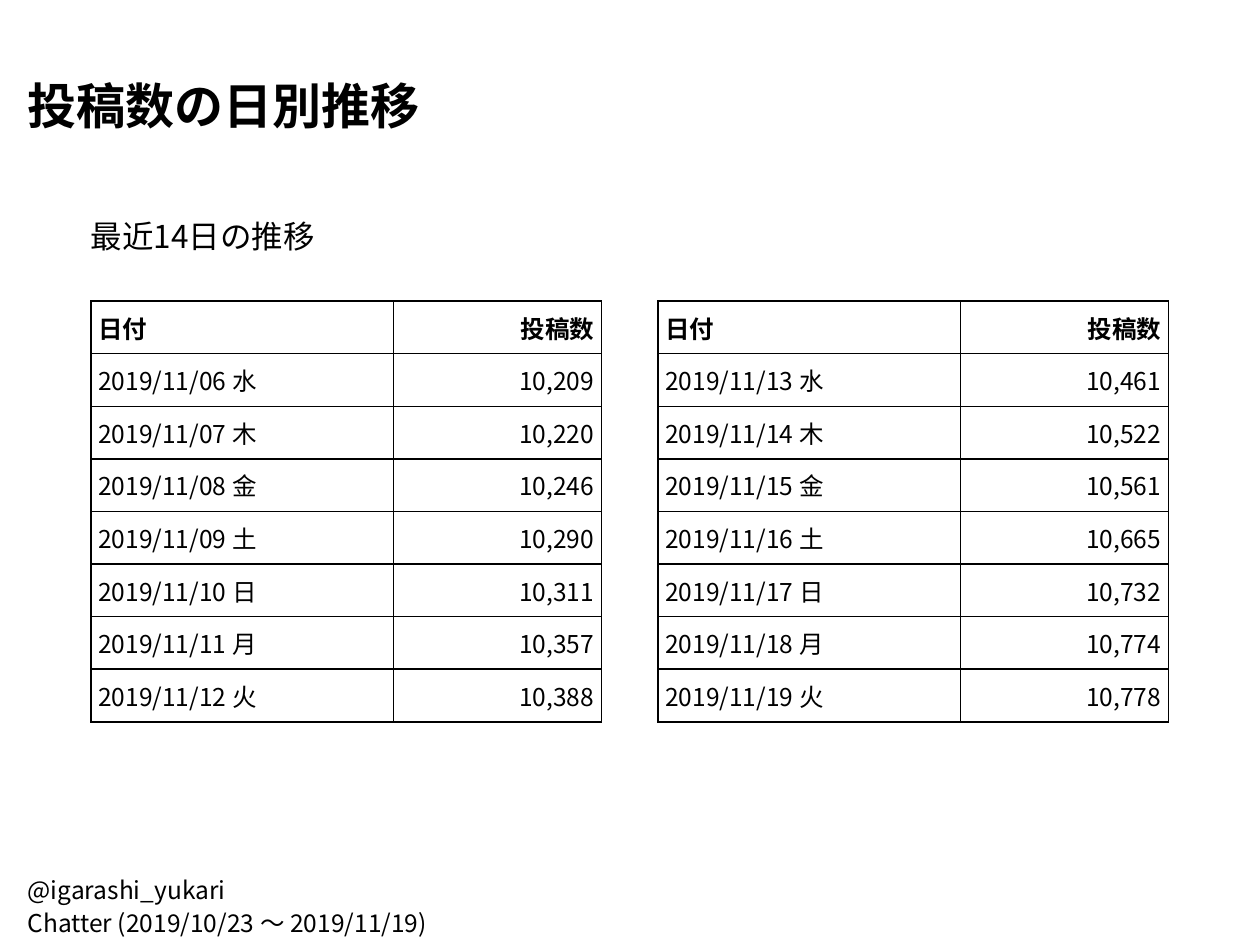
from dataclasses import dataclass

from lxml.etree import SubElement
from pptx import Presentation
from pptx.dml.color import RGBColor
from pptx.enum.text import MSO_ANCHOR, MSO_AUTO_SIZE, PP_ALIGN
from pptx.oxml.ns import qn
from pptx.util import Cm, Length, Pt

BLACK = RGBColor(0x00, 0x00, 0x00)
WHITE = RGBColor(0xFF, 0xFF, 0xFF)
FONT = "Noto Sans CJK JP"
WEEKDAYS = "水木金土日月火"
HEADER = ("日付", "投稿数")
COLUMN_WIDTHS = (Cm(6.1), Cm(4.2))
ROW_HEIGHT = Cm(1.06)
TABLE_TOP = Cm(6.07)
CELL_MARGIN = Cm(0.15)


@dataclass(frozen=True)
class TextBlock:
    text: str
    left: Length
    top: Length
    width: Length
    height: Length
    size: Length
    line_spacing: Length
    bold: bool = False


@dataclass(frozen=True)
class WeekTable:
    left: Length
    first_day: int
    counts: tuple[int, ...]


TITLE = TextBlock("投稿数の日別推移", Cm(0), Cm(1.12), Cm(25.4), Cm(1.55),
                  Pt(28), Pt(37.3), bold=True)
SUBTITLE = TextBlock("最近14日の推移", Cm(1.27), Cm(4.01), Cm(22.86), Cm(1.2),
                     Pt(18), Pt(24))
FOOTER = TextBlock("@igarashi_yukari\nChatter (2019/10/23 〜 2019/11/19)",
                   Cm(0), Cm(17.3), Cm(17.78), Cm(1.55), Pt(14), Pt(18.7))
WEEKS = (
    WeekTable(Cm(1.83), 6, (10209, 10220, 10246, 10290, 10311, 10357, 10388)),
    WeekTable(Cm(13.26), 13, (10461, 10522, 10561, 10665, 10732, 10774, 10778)),
)


def format_runs(paragraph, size: Length, bold: bool) -> None:
    for run in paragraph.runs:
        font = run.font
        font.name, font.size, font.bold = FONT, size, bold
        font.color.rgb = BLACK
        SubElement(font._element, qn("a:ea"), typeface=FONT)


def fill_text(shape, block: TextBlock) -> None:
    """Place a text shape and write the block into it as one paragraph."""
    shape.left, shape.top = block.left, block.top
    shape.width, shape.height = block.width, block.height
    frame = shape.text_frame
    frame.word_wrap = True
    frame.auto_size = MSO_AUTO_SIZE.NONE
    frame.vertical_anchor = MSO_ANCHOR.TOP
    frame.margin_left = frame.margin_right = Cm(0.56)
    frame.margin_top = frame.margin_bottom = Cm(0.28)
    paragraph = frame.paragraphs[0]
    paragraph.text = block.text
    paragraph.alignment = PP_ALIGN.LEFT
    paragraph.line_spacing = block.line_spacing
    paragraph.space_before = Pt(0)
    format_runs(paragraph, block.size, block.bold)


def remove_bullet(paragraph) -> None:
    properties = paragraph._p.get_or_add_pPr()
    properties.set("marL", "0")
    properties.set("indent", "0")
    SubElement(properties, qn("a:buNone"))


def add_borders(cell) -> None:
    properties = cell._tc.get_or_add_tcPr()
    for side in ("lnL", "lnR", "lnT", "lnB"):
        line = SubElement(properties, qn(f"a:{side}"), w=str(Pt(1)))
        fill = SubElement(line, qn("a:solidFill"))
        SubElement(fill, qn("a:srgbClr"), val=str(BLACK))


def fill_cell(cell, text: str, alignment: PP_ALIGN, bold: bool) -> None:
    cell.margin_left = cell.margin_right = CELL_MARGIN
    cell.margin_top = cell.margin_bottom = CELL_MARGIN
    cell.vertical_anchor = MSO_ANCHOR.MIDDLE
    add_borders(cell)
    cell.fill.solid()
    cell.fill.fore_color.rgb = WHITE
    paragraph = cell.text_frame.paragraphs[0]
    paragraph.text = text
    paragraph.alignment = alignment
    format_runs(paragraph, Pt(14), bold)


def add_week_table(slide, week: WeekTable) -> None:
    rows = [HEADER]
    for offset, (weekday, count) in enumerate(zip(WEEKDAYS, week.counts)):
        rows.append((f"2019/11/{week.first_day + offset:02d} {weekday}", f"{count:,}"))
    table = slide.shapes.add_table(
        len(rows), len(HEADER), week.left, TABLE_TOP,
        sum(COLUMN_WIDTHS), ROW_HEIGHT * len(rows)).table
    table.first_row = table.horz_banding = False
    for column, width in zip(table.columns, COLUMN_WIDTHS):
        column.width = width
    for row_index, row in enumerate(rows):
        table.rows[row_index].height = ROW_HEIGHT
        for column_index, alignment in enumerate((PP_ALIGN.LEFT, PP_ALIGN.RIGHT)):
            fill_cell(table.cell(row_index, column_index), row[column_index],
                      alignment, bold=row_index == 0)


def main() -> None:
    presentation = Presentation()
    presentation.slide_width, presentation.slide_height = Cm(25.4), Cm(19.05)
    slide = presentation.slides.add_slide(presentation.slide_layouts[1])
    body = slide.placeholders[1]
    fill_text(slide.shapes.title, TITLE)
    fill_text(body, SUBTITLE)
    remove_bullet(body.text_frame.paragraphs[0])
    for week in WEEKS:
        add_week_table(slide, week)
    footer = slide.shapes.add_textbox(FOOTER.left, FOOTER.top, FOOTER.width, FOOTER.height)
    fill_text(footer, FOOTER)
    presentation.save("out.pptx")


if __name__ == "__main__":
    main()
